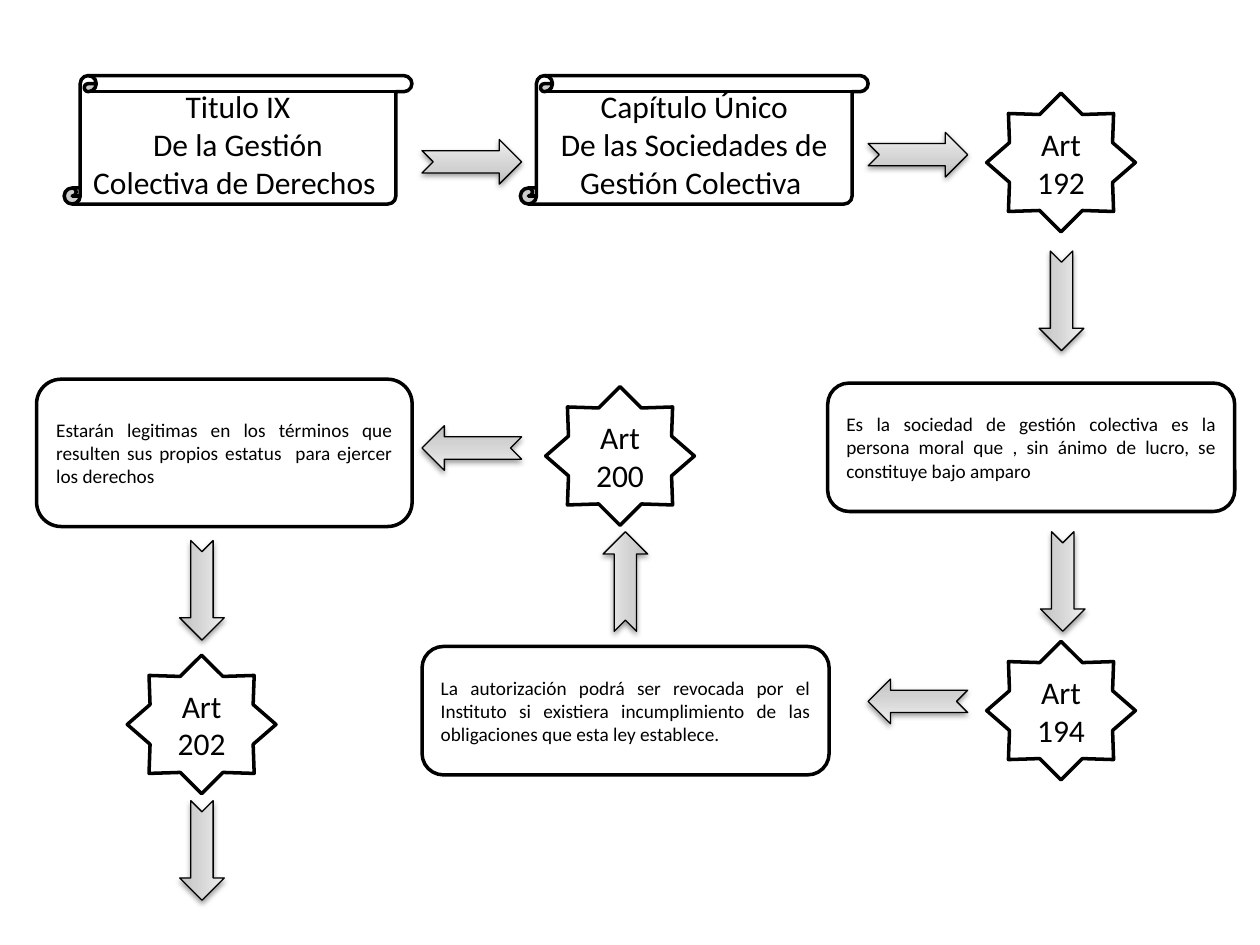
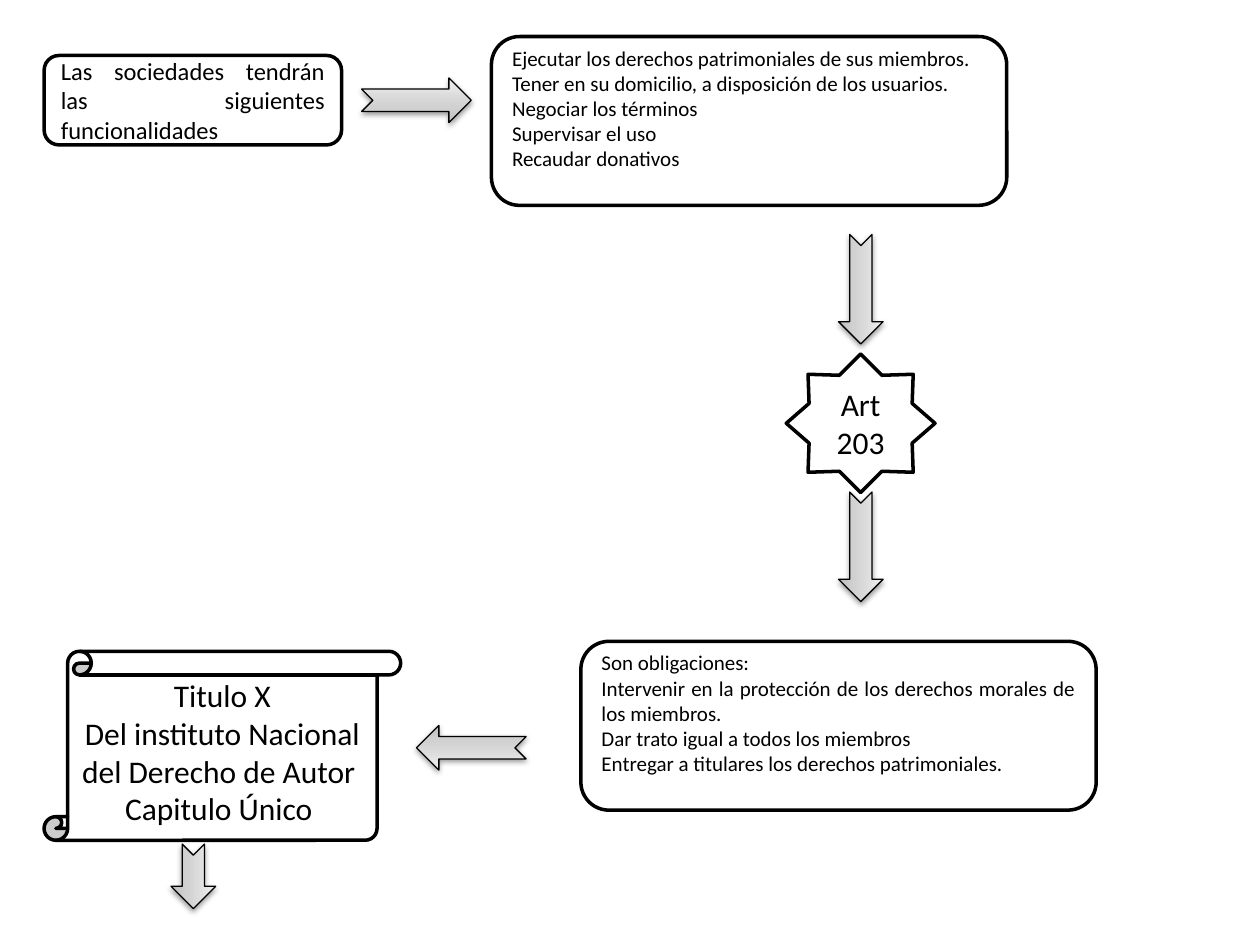
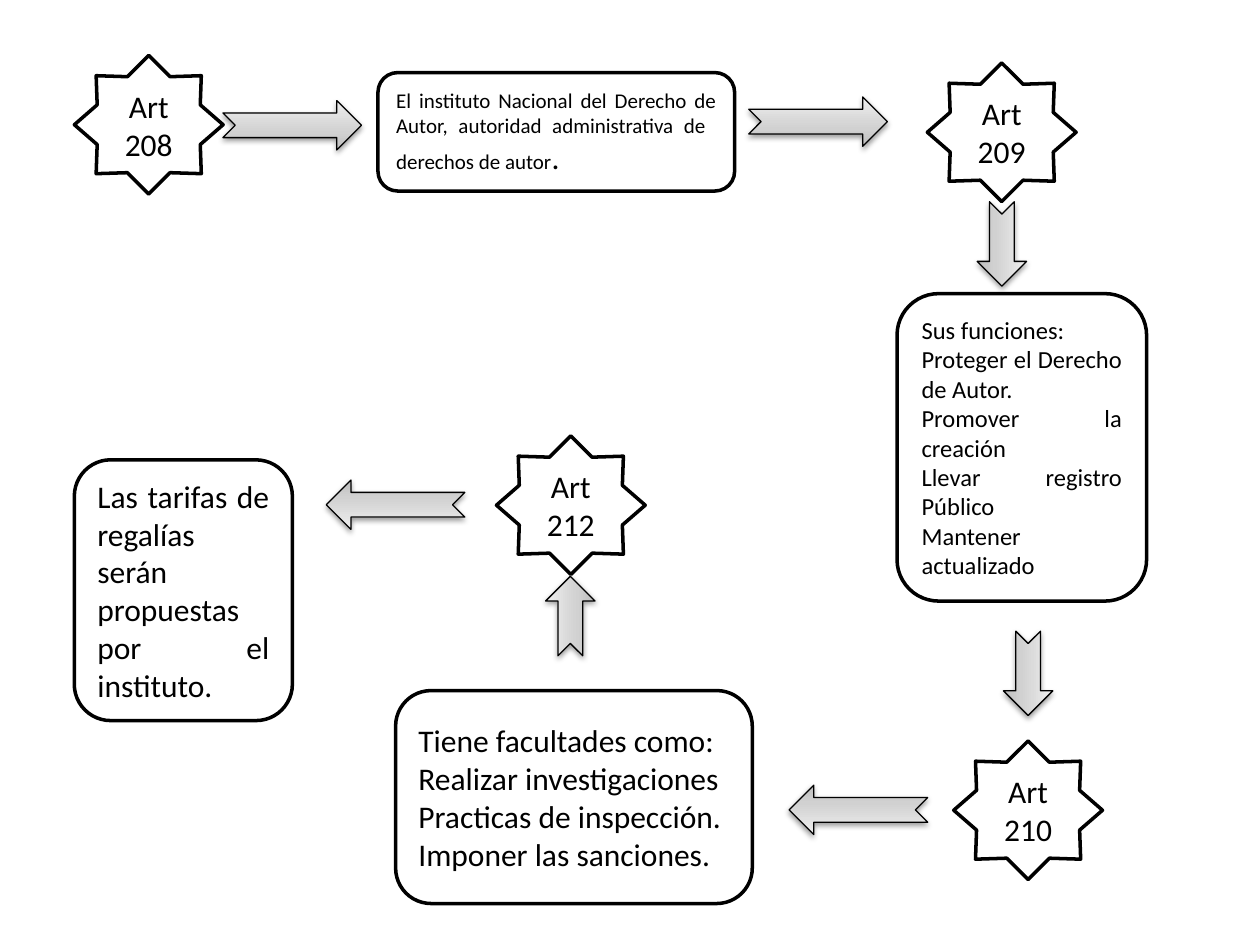
from copy import deepcopy

from pptx import Presentation
from pptx import util as u
from pptx.dml import color as dml
from pptx.enum import shapes, text
from pptx.oxml import parse_xml
from pptx.oxml import ns

COLOURS = {"ink": "000000", "paper": "FFFFFF",
           "dark": "BDBDBD", "middle": "D1D1D1", "light": "EEEEEE"}
FONT = "Calibri"
GRADIENT = [(0, "dark"), (0.35, "middle"), (1, "light")]
TURNS = {"right": 0, "down": 90, "left": 180, "up": 270}
STAR_SIZE = (85, 79.2)
STAR_TEXT = 18
KINDS = {
    "scroll": (shapes.MSO_SHAPE.VERTICAL_SCROLL, text.PP_ALIGN.CENTER),
    "card": (shapes.MSO_SHAPE.FLOWCHART_ALTERNATE_PROCESS, text.PP_ALIGN.JUSTIFY),
    "star": (shapes.MSO_SHAPE.STAR_8_POINT, text.PP_ALIGN.CENTER),
}
SPARE_LINE = 14.65  # room kept under the lists of the second page

# Stars: left, top, article number
# Panels: kind, left, top, width, height, text size, space below, paragraphs
# Arrows: direction, centre x, centre y, length
PAGES = [
    {
        "stars": [(563.8, 53.3, 192), (563.8, 366.5, 194),
                  (311.8, 221, 200), (72.7, 374.4, 202)],
        "panels": [
            ("scroll", 36.7, 43.2, 198.7, 73.4, 18, 0,
             ["Titulo IX", "De la Gestión Colectiva de Derechos "]),
            ("scroll", 297.4, 43.2, 198.7, 73.4, 18, 0,
             ["Capítulo Único", "De las Sociedades de Gestión Colectiva "]),
            ("card", 473, 218.9, 232.6, 73.4, 11, 0,
             ["Es la sociedad de gestión colectiva es la persona moral que , "
              "sin ánimo de lucro, se constituye bajo amparo "]),
            ("card", 241.2, 369.4, 232.6, 73.4, 11, 0,
             ["La autorización podrá ser revocada por el Instituto si existiera "
              "incumplimiento de las obligaciones que esta ley establece. "]),
            ("card", 20.9, 216.7, 214.6, 84.2, 11, 0,
             ["Estarán legitimas en los términos que resulten sus propios "
              "estatus  para ejercer los derechos "]),
        ],
        "thickness": 25.5,
        "arrows": [
            ("right", 269.6, 92.5, 56.9), ("right", 524.5, 88.4, 56.9),
            ("down", 606.6, 171.9, 56.9), ("down", 607.3, 332.3, 56.9),
            ("left", 524.5, 400.8, 56.9), ("up", 357.4, 332.3, 56.9),
            ("left", 269.6, 256, 56.9), ("down", 115.4, 337.3, 56.9),
            ("down", 115.4, 486, 56.9),
        ],
    },
    {
        "stars": [(449.3, 202.3, 203)],
        "panels": [
            ("card", 25.2, 31.7, 170, 51.1, 14, 0,
             ["Las sociedades tendrán las siguientes funcionalidades "]),
            ("card", 280.8, 20.9, 294.5, 96.5, 12, SPARE_LINE,
             ["Ejecutar los derechos patrimoniales de sus miembros.",
              "Tener en su domicilio, a disposición de los usuarios.",
              "Negociar los términos", "Supervisar el uso", "Recaudar donativos"]),
            ("card", 331.9, 366.5, 294.5, 96.5, 12, SPARE_LINE,
             ["Son obligaciones: ",
              "Intervenir en la protección de los derechos morales de los miembros.",
              "Dar trato igual a todos los miembros",
              "Entregar a titulares los derechos patrimoniales."]),
            ("scroll", 25.2, 372.2, 203.8, 108, 18, 0,
             ["Titulo X", "Del instituto Nacional del Derecho de Autor ",
              "Capitulo Único "]),
        ],
        "thickness": 25.5,
        "arrows": [
            ("right", 238, 57.3, 62.6), ("down", 491.9, 165.3, 62.6),
            ("down", 491.9, 312.5, 62.6), ("left", 269.3, 427.3, 62.6),
            ("down", 110.5, 500.8, 36.9),
        ],
    },
    {
        "stars": [(42.5, 31.7, 208), (529.9, 36, 209),
                  (545, 423.4, 210), (283.7, 249.1, 212)],
        "panels": [
            ("card", 216, 41.5, 203.8, 67.7, 12, 0,
             [("El instituto Nacional del Derecho de Autor, autoridad "
               "administrativa de  derechos de autor", ".", 18)]),
            ("card", 512.6, 167.8, 142.6, 175.7, 14, 0,
             ["Sus funciones:", "Proteger el Derecho de Autor.",
              "Promover la creación ", "Llevar registro Público ",
              "Mantener actualizado  "]),
            ("card", 226.1, 394.6, 203.8, 121.7, 18, 0,
             ["Tiene facultades como:", "Realizar investigaciones ",
              "Practicas de inspección.", "Imponer las sanciones. "]),
            ("card", 42.5, 262.8, 124.6, 149, 18, 0,
             ["Las tarifas de regalías serán propuestas por el instituto. "]),
        ],
        "thickness": 28.2,
        "arrows": [
            ("right", 167, 71.6, 79.2), ("right", 467.5, 69.5, 79.2),
            ("down", 572.5, 139.4, 48.2), ("down", 587.5, 384.8, 48.2),
            ("left", 490.5, 462.8, 79.2), ("up", 325.9, 352, 45.4),
            ("left", 226, 288.4, 79.2),
        ],
    },
]


def colour(name):
    return dml.RGBColor.from_string(COLOURS[name])


def add_outlined(page, preset, left, top, width, height, weight):
    shape = page.shapes.add_shape(preset, *map(u.Pt, (left, top, width, height)))
    shape.shadow.inherit = False
    shape.line.color.rgb = colour("ink")
    shape.line.width = u.Pt(weight)
    return shape


def format_run(span, size):
    span.font.name = FONT
    span.font.size = u.Pt(size)
    span.font.color.rgb = colour("ink")


def add_panel(page, kind, left, top, width, height, size, space_below, lines):
    preset, align = KINDS[kind]
    box = add_outlined(page, preset, left, top, width, height, 2)
    box.fill.solid()
    box.fill.fore_color.rgb = colour("paper")
    frame = box.text_frame
    frame.word_wrap = True
    frame.vertical_anchor = text.MSO_ANCHOR.MIDDLE
    frame.margin_bottom = u.Pt(3.6 + space_below)
    for number, line in enumerate(lines):
        para = frame.add_paragraph() if number else frame.paragraphs[0]
        para.alignment = align
        # A tuple is a line whose ending has its own size
        body, *ending = line if isinstance(line, tuple) else (line,)
        para.text = body
        format_run(para.runs[0], size)
        if ending:
            span = para.add_run()
            span.text = ending[0]
            format_run(span, ending[1])


def add_arrow(page, direction, centre_x, centre_y, length, thickness):
    arrow = add_outlined(page, shapes.MSO_SHAPE.NOTCHED_RIGHT_ARROW,
                         centre_x - length / 2, centre_y - thickness / 2,
                         length, thickness, 0.75)
    arrow.rotation = TURNS[direction]
    # Three-stop gradient: the default one has two stops
    arrow.fill.gradient()
    arrow.fill.gradient_angle = 90
    stop_list = arrow._element.spPr.find(".//" + ns.qn("a:gsLst"))
    stop_list.append(deepcopy(stop_list[-1]))
    for stop, (position, name) in zip(arrow.fill.gradient_stops, GRADIENT):
        stop.position = position
        stop.color.rgb = colour(name)
    # Soft shadow straight below
    effects = arrow._element.spPr.find(ns.qn("a:effectLst"))
    effects.append(parse_xml(
        f'<a:outerShdw {ns.nsdecls("a")} blurRad="{u.Pt(3.15)}" dist="{u.Pt(1.57)}" '
        f'dir="5400000" rotWithShape="0"><a:srgbClr val="{COLOURS["ink"]}">'
        '<a:alpha val="38000"/></a:srgbClr></a:outerShdw>'))


def main():
    deck = Presentation()
    deck.slide_width, deck.slide_height = u.Pt(720), u.Pt(540)
    for content in PAGES:
        page = deck.slides.add_slide(deck.slide_layouts[6])
        for panel in content["panels"]:
            add_panel(page, *panel)
        for left, top, article in content["stars"]:
            add_panel(page, "star", left, top, *STAR_SIZE, STAR_TEXT, 0,
                      [f"Art {article}"])
        for arrow in content["arrows"]:
            add_arrow(page, *arrow, content["thickness"])
    deck.save("out.pptx")


if __name__ == "__main__":
    main()
